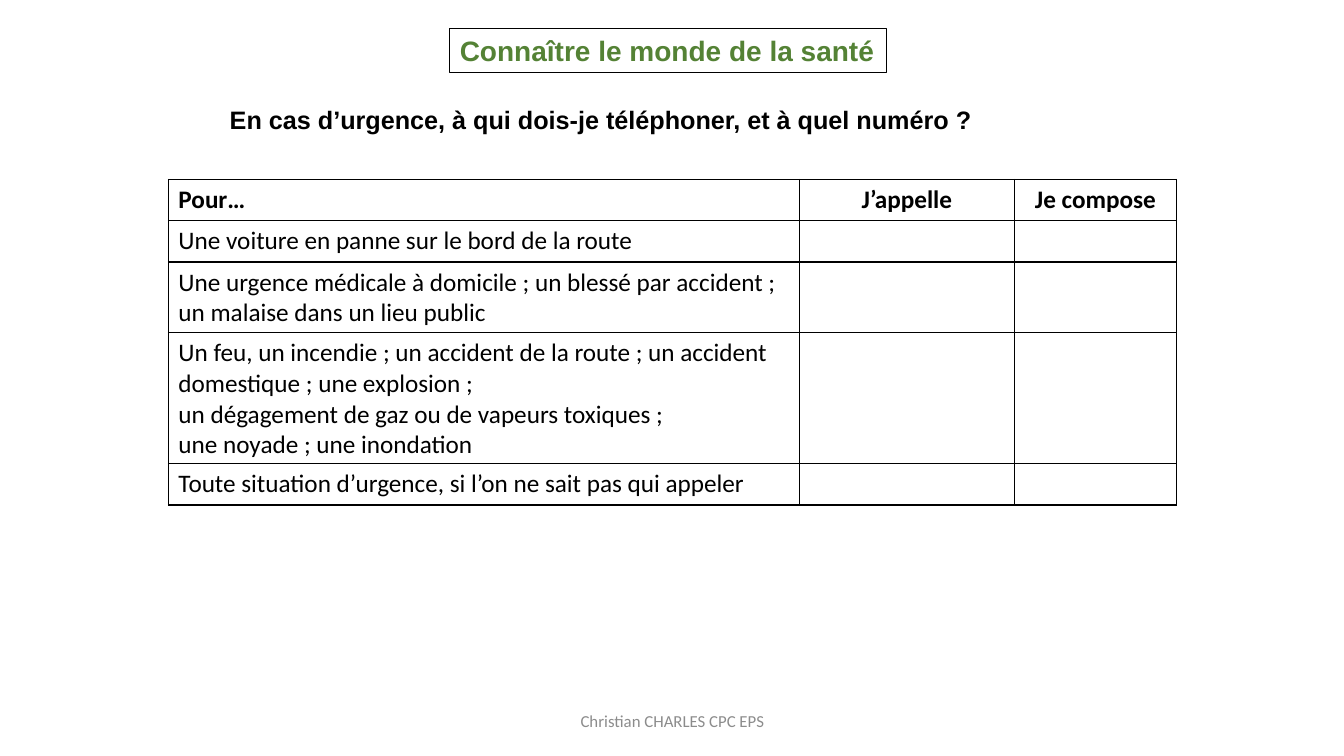
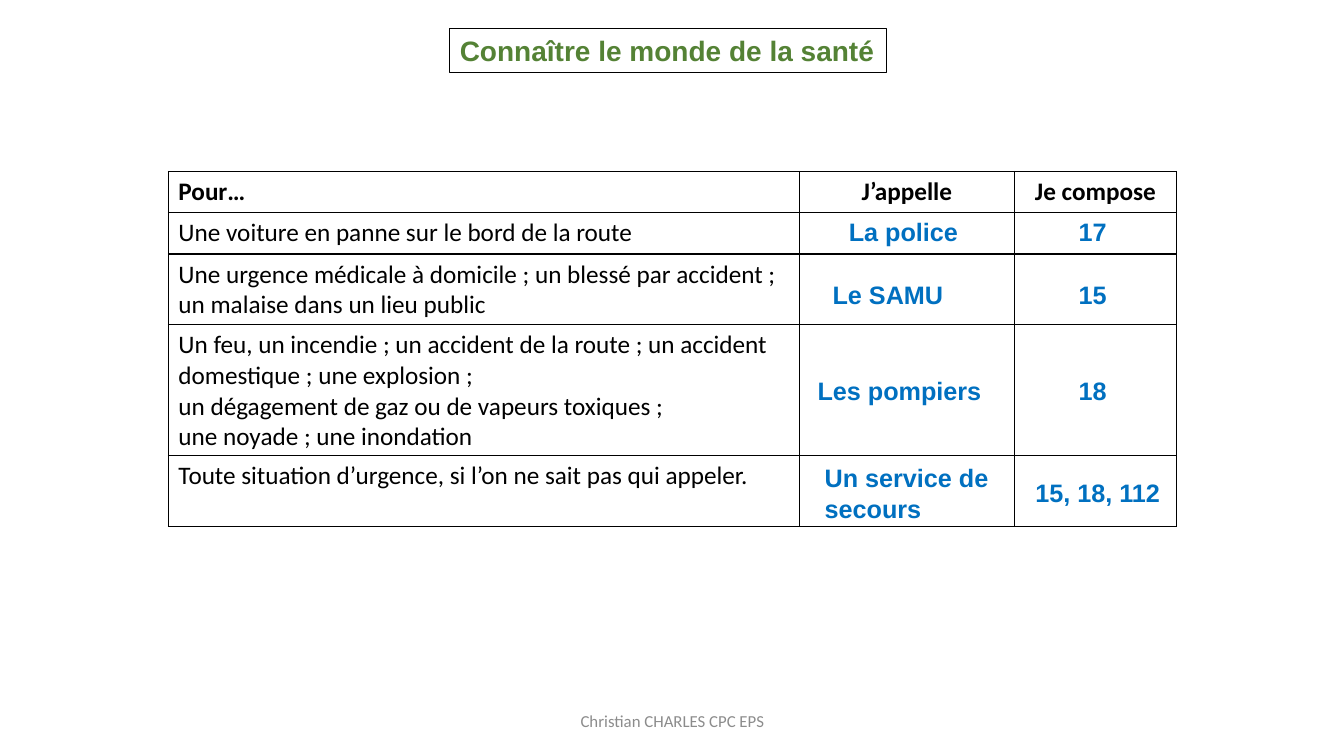
from pptx import Presentation
from pptx import util as u
from pptx.dml.color import RGBColor
from pptx.enum import text as t
from pptx.oxml import parse_xml
from pptx.oxml.ns import nsdecls

BLACK = RGBColor(0x00, 0x00, 0x00)
GREEN = RGBColor(0x54, 0x82, 0x35)
BLUE = RGBColor(0x00, 0x70, 0xC0)
GREY = RGBColor(0x8C, 0x8C, 0x8C)
LEFT, CENTER = t.PP_ALIGN.LEFT, t.PP_ALIGN.CENTER
TOP, MIDDLE = t.MSO_ANCHOR.TOP, t.MSO_ANCHOR.MIDDLE

TITLE = "Connaître le monde de la santé"
FOOTER = "Christian CHARLES CPC EPS"
HEADS = ["Pour…", "J’appelle", "Je compose"]
CASES = [
    ["Une voiture en panne sur le bord de la route"],
    ["Une urgence médicale à domicile ; un blessé par accident ; "
     "un malaise dans un lieu public"],
    ["Un feu, un incendie ; un accident de la route ; "
     "un accident domestique ; une explosion ;",
     "un dégagement de gaz ou de vapeurs toxiques ;",
     "une noyade ; une inondation"],
]
LAST = "Toute situation d’urgence, si l’on ne sait pas qui appeler"
COLS = [6.26, 2.13, 1.61]
ROWS = [0.41, 0.41, 0.7, 1.3]


class Deck:
    """Holds the shared style and the current slide."""

    def __init__(self):
        self.prs = Presentation()
        self.prs.slide_width = u.Inches(13.33)
        self.prs.slide_height = u.Inches(7.5)
        self.slide = None

    def start(self):
        self.slide = self.prs.slides.add_slide(self.prs.slide_layouts[5])
        self.title()
        self.label(FOOTER, 4.42, 6.95, 4.5, size=12, font="Calibri",
                   color=GREY, bold=False, align=CENTER, anchor=MIDDLE)

    def put(self, frame, lines, size=18, font="Arial", color=BLACK,
            bold=True, align=LEFT):
        for i, line in enumerate(lines):
            para = frame.add_paragraph() if i else frame.paragraphs[0]
            para.alignment = align
            run = para.add_run()
            run.text = line
            run.font.size = u.Pt(size)
            run.font.name = font
            run.font.bold = bold
            run.font.color.rgb = color

    def title(self):
        box = self.slide.shapes.title
        box.left, box.top = u.Inches(4.46), u.Inches(0.28)
        box.width, box.height = u.Inches(4.33), u.Inches(0.44)
        box.line.color.rgb = BLACK
        box.line.width = u.Pt(1)
        frame = box.text_frame
        frame.auto_size = t.MSO_AUTO_SIZE.NONE
        frame.word_wrap = False
        frame.vertical_anchor = TOP
        self.put(frame, [TITLE], size=20, color=GREEN)

    def label(self, words, x, y, w, h=0.4, anchor=TOP, **style):
        box = self.slide.shapes.add_textbox(
            u.Inches(x), u.Inches(y), u.Inches(w), u.Inches(h))
        box.text_frame.word_wrap = True
        box.text_frame.vertical_anchor = anchor
        self.put(box.text_frame, [words], **style)

    def border(self, cell):
        props = cell._tc.get_or_add_tcPr()
        for side in "LRTB":
            props.append(parse_xml(
                f'<a:ln{side} {nsdecls("a")} w="12700"><a:solidFill>'
                f'<a:srgbClr val="{BLACK}"/></a:solidFill></a:ln{side}>'))

    def table(self, top, last, end):
        """Grid of cases; last is the final case, end its row height."""
        rows = ROWS + [end]
        grid = self.slide.shapes.add_table(
            len(rows), len(COLS), u.Inches(1.67), u.Inches(top),
            u.Inches(sum(COLS)), u.Inches(sum(rows))).table
        grid.first_row = grid.horz_banding = False
        for col, width in zip(grid.columns, COLS):
            col.width = u.Inches(width)
        for row, height in zip(grid.rows, rows):
            row.height = u.Inches(height)
        for cell in grid.iter_cells():
            self.border(cell)
            cell.fill.background()
        for i, head in enumerate(HEADS):
            self.put(grid.cell(0, i).text_frame, [head], font="Calibri",
                     align=CENTER if i else LEFT)
        for i, lines in enumerate(CASES + [[last]], 1):
            self.put(grid.cell(i, 0).text_frame, lines, font="Calibri",
                     bold=False)


def main():
    deck = Deck()

    # Question slide, with blank answers
    deck.start()
    deck.table(1.78, LAST, 0.41)
    deck.label("En cas d’urgence, à qui dois-je téléphoner, "
               "et à quel numéro ?", 2.18, 0.99, 7.95)

    # Answer slide
    deck.start()
    deck.table(1.7, LAST + ".", 0.7)
    for who, x, w, num, y in [("La police", 8.32, 1.49, "17", 2.1),
                              ("Le SAMU", 8.16, 1.65, "15", 2.72),
                              ("Les pompiers", 8.01, 1.89, "18", 3.67)]:
        deck.label(who, x, y, w, color=BLUE)
        deck.label(num, 10.6, y, 0.55, color=BLUE)
    deck.label("Un service de secours", 8.08, 4.54, 2.28, 0.71, color=BLUE)
    deck.label("15, 18, 112", 10.17, 4.69, 1.5, color=BLUE)

    deck.prs.save("out.pptx")


if __name__ == "__main__":
    main()
